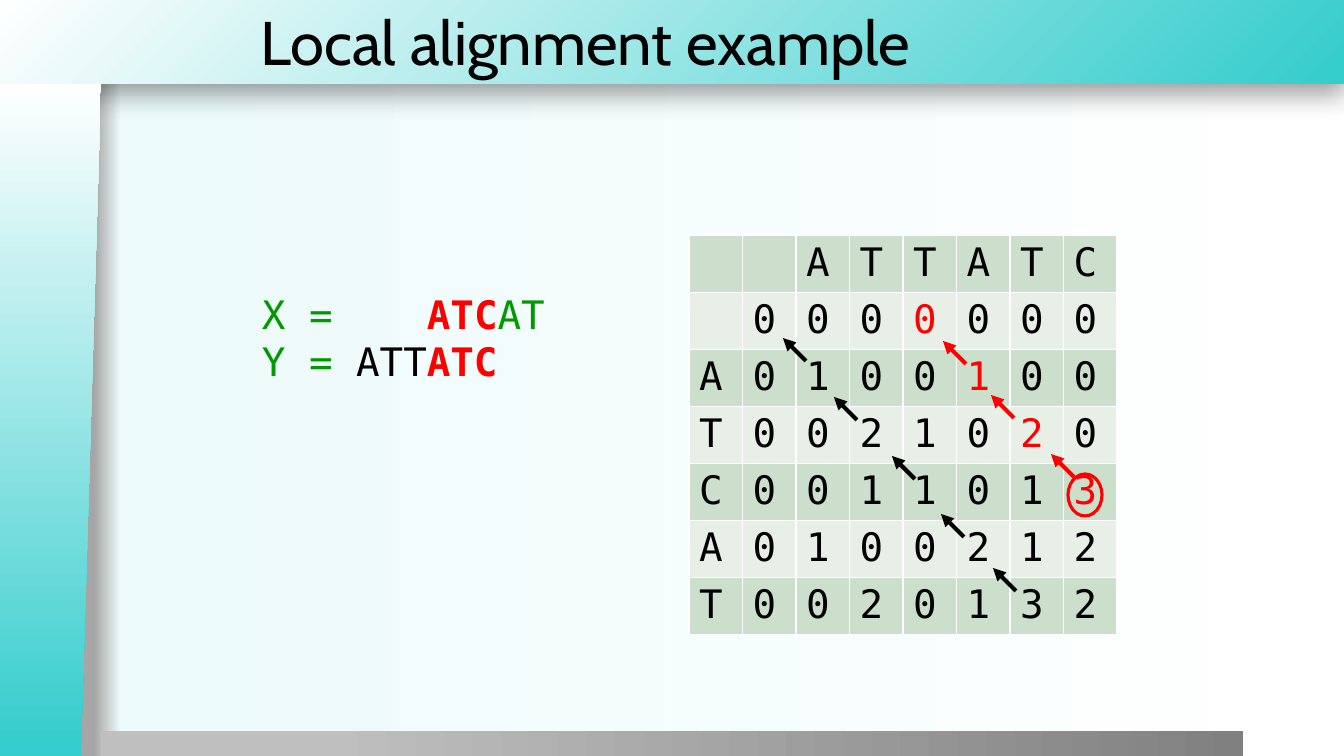
import dataclasses

import lxml.etree
import pptx
import pptx.dml.color
import pptx.enum.dml
import pptx.enum.shapes
import pptx.enum.text
import pptx.oxml
import pptx.oxml.ns
import pptx.util

RGB = pptx.dml.color.RGBColor
SHAPE = pptx.enum.shapes.MSO_SHAPE
qn = pptx.oxml.ns.qn

BLACK = RGB(0x00, 0x00, 0x00)
WHITE = RGB(0xFF, 0xFF, 0xFF)
RED = RGB(0xFF, 0x00, 0x00)
GREEN = RGB(0x00, 0x99, 0x00)
TEAL = RGB(0x34, 0xCC, 0xCC)
PALE = RGB(0xED, 0xFB, 0xFB)
GREY = RGB(0xA6, 0xA6, 0xA6)
SILVER = RGB(0xBF, 0xBF, 0xBF)
SLATE = RGB(0x80, 0x80, 0x80)
BANDS = (RGB(0xCC, 0xDE, 0xCC), RGB(0xE7, 0xEF, 0xE7))
MONO = "DejaVu Sans Mono"

GRID = ("  ATTATC", " 0000000", "A0100100", "T0021020",
        "C0011013", "A0100212", "T0020132")
STEP = 23  # length of an arrow along each axis


@dataclasses.dataclass
class Panel:
    kind: SHAPE
    box: tuple
    stops: tuple
    turn: int = 0
    round: bool = False


@dataclasses.dataclass
class Arrow:
    x: int
    y: int
    color: RGB


@dataclasses.dataclass
class Part:
    text: str
    color: RGB
    bold: bool = False


PANELS = (
    Panel(SHAPE.RECTANGLE, (-1, 0, 1345, 84), ((0, TEAL), (100, WHITE)), round=True),
    Panel(SHAPE.RECTANGLE, (101, 731, 1142, 26), ((20, SILVER), (100, SLATE))),
    Panel(SHAPE.FLOWCHART_MANUAL_INPUT, (-286, 370, 673, 101),
          ((1, TEAL), (100, WHITE)), turn=270),
)
ARROWS = (
    Arrow(1074, 477, RED), Arrow(1014, 418, RED), Arrow(966, 364, RED),
    Arrow(1016, 591, BLACK), Arrow(964, 537, BLACK), Arrow(915, 479, BLACK),
    Arrow(857, 420, BLACK), Arrow(806, 361, BLACK),
)
LINES = (
    (Part("X =\t", GREEN), Part("ATC", RED, True), Part("AT", GREEN)),
    (Part("Y = ", GREEN), Part("ATT", BLACK), Part("ATC", RED, True)),
)


def px(size: int) -> int:
    return round(size * 914400 / 100.8)


def place(*box: int) -> list:
    return [px(size) for size in box]


def sub(node, tag: str, **attrs):
    return lxml.etree.SubElement(node, qn(tag), {k: str(v) for k, v in attrs.items()})


def blend(fill, node, stops: tuple, ring: bool = False) -> None:
    """Put a gradient on a fill; node is the element that holds it."""
    fill.gradient()
    grad = next(node.iter(qn("a:gradFill")))
    for child in list(grad):
        grad.remove(child)
    items = sub(grad, "a:gsLst")
    for pos, color in stops:
        sub(sub(items, "a:gs", pos=pos * 1000), "a:srgbClr", val=color)
    if ring:
        way = sub(grad, "a:path", path="circle")
        sub(way, "a:fillToRect", l=100000, t=100000)
    else:
        sub(grad, "a:lin", ang=0, scaled=0)


def style(font, size: int, name: str, color: RGB) -> None:
    font.size = pptx.util.Pt(size)
    font.name = name
    font.color.rgb = color


def add_panel(slide, panel: Panel) -> None:
    shape = slide.shapes.add_shape(panel.kind, *place(*panel.box))
    shape.shadow.inherit = False
    shape.line.fill.background()
    props = shape._element.spPr
    blend(shape.fill, props, panel.stops, panel.round)
    if panel.turn:
        shape.rotation = panel.turn
        props.find(qn("a:xfrm")).set("flipV", "1")
    if panel.round:
        shade = sub(props.find(qn("a:effectLst")), "a:outerShdw", blurRad=pptx.util.Pt(20),
                    dist=pptx.util.Pt(6), dir=5400000, algn="t", rotWithShape=0)
        sub(sub(shade, "a:srgbClr", val=BLACK), "a:alpha", val=40000)


def add_title(slide, text: str) -> None:
    title = slide.shapes.title
    title.left, title.top, title.width, title.height = place(250, 0, 824, 82)
    title.text = text
    frame = title.text_frame
    frame.vertical_anchor = pptx.enum.text.MSO_ANCHOR.MIDDLE
    para = frame.paragraphs[0]
    para.alignment = pptx.enum.text.PP_ALIGN.LEFT
    style(para.font, 44, "Cabin", BLACK)
    slide.shapes._spTree.append(title._element)  # above the header


def add_grid(slide) -> None:
    table = slide.shapes.add_table(
        len(GRID), len(GRID[0]), *place(689, 235, 428, 400)).table
    table.first_row = table.horz_banding = False
    for row, marks in enumerate(GRID):
        for col, mark in enumerate(marks):
            cell = table.cell(row, col)
            cell.text = mark.strip()
            best = col - row == 3 and 1 <= row <= 4
            style(cell.text_frame.paragraphs[0].font, 28, MONO, RED if best else BLACK)
            props = cell._tc.get_or_add_tcPr()
            for side in ("a:lnL", "a:lnR", "a:lnT", "a:lnB"):
                edge = sub(props, side, w=pptx.util.Pt(1))
                sub(sub(edge, "a:solidFill"), "a:srgbClr", val=WHITE)
            cell.fill.solid()
            cell.fill.fore_color.rgb = BANDS[row % 2]


def add_arrow(slide, arrow: Arrow) -> None:
    ends = place(arrow.x, arrow.y, arrow.x - STEP, arrow.y - STEP)
    link = slide.shapes.add_connector(pptx.enum.shapes.MSO_CONNECTOR.STRAIGHT, *ends)
    link.line.color.rgb = arrow.color
    link.line.width = pptx.util.Pt(3)
    sub(link.line._get_or_add_ln(), "a:tailEnd", type="triangle")
    sub(link._element.spPr, "a:effectLst")


def add_lines(slide) -> None:
    frame = slide.shapes.add_textbox(*place(252, 285, 328, 132)).text_frame
    frame.word_wrap = True
    for num, parts in enumerate(LINES):
        para = frame.add_paragraph() if num else frame.paragraphs[0]
        para.font.size = pptx.util.Pt(28)
        para.font.name = MONO
        props = para._p.get_or_add_pPr()
        tabs = lxml.etree.Element(qn("a:tabLst"))
        sub(tabs, "a:tab", pos=px(165), algn="l")
        props.insert(0, tabs)
        for part in parts:
            run = para.add_run()
            run.text = part.text
            run.font.bold = part.bold
            run.font.color.rgb = part.color


def add_ring(slide) -> None:
    ring = slide.shapes.add_shape(SHAPE.OVAL, *place(1068, 474, 34, 42))
    ring.shadow.inherit = False
    ring.fill.background()
    ring.line.color.rgb = RED
    ring.line.width = pptx.util.Pt(2.25)


def main() -> None:
    deck = pptx.Presentation()
    deck.slide_width, deck.slide_height = place(1344, 756)
    slide = deck.slides.add_slide(deck.slide_layouts[5])

    # Backdrop and title
    blend(slide.background.fill, slide._element,
          ((0, GREY), (7, GREY), (9, PALE), (100, WHITE)))
    for panel in PANELS:
        add_panel(slide, panel)
    add_title(slide, "Local alignment example")

    # Score grid with its traceback
    add_grid(slide)
    for arrow in ARROWS:
        add_arrow(slide, arrow)

    # Sequences and best score
    add_lines(slide)
    add_ring(slide)
    deck.save("out.pptx")


if __name__ == "__main__":
    main()
